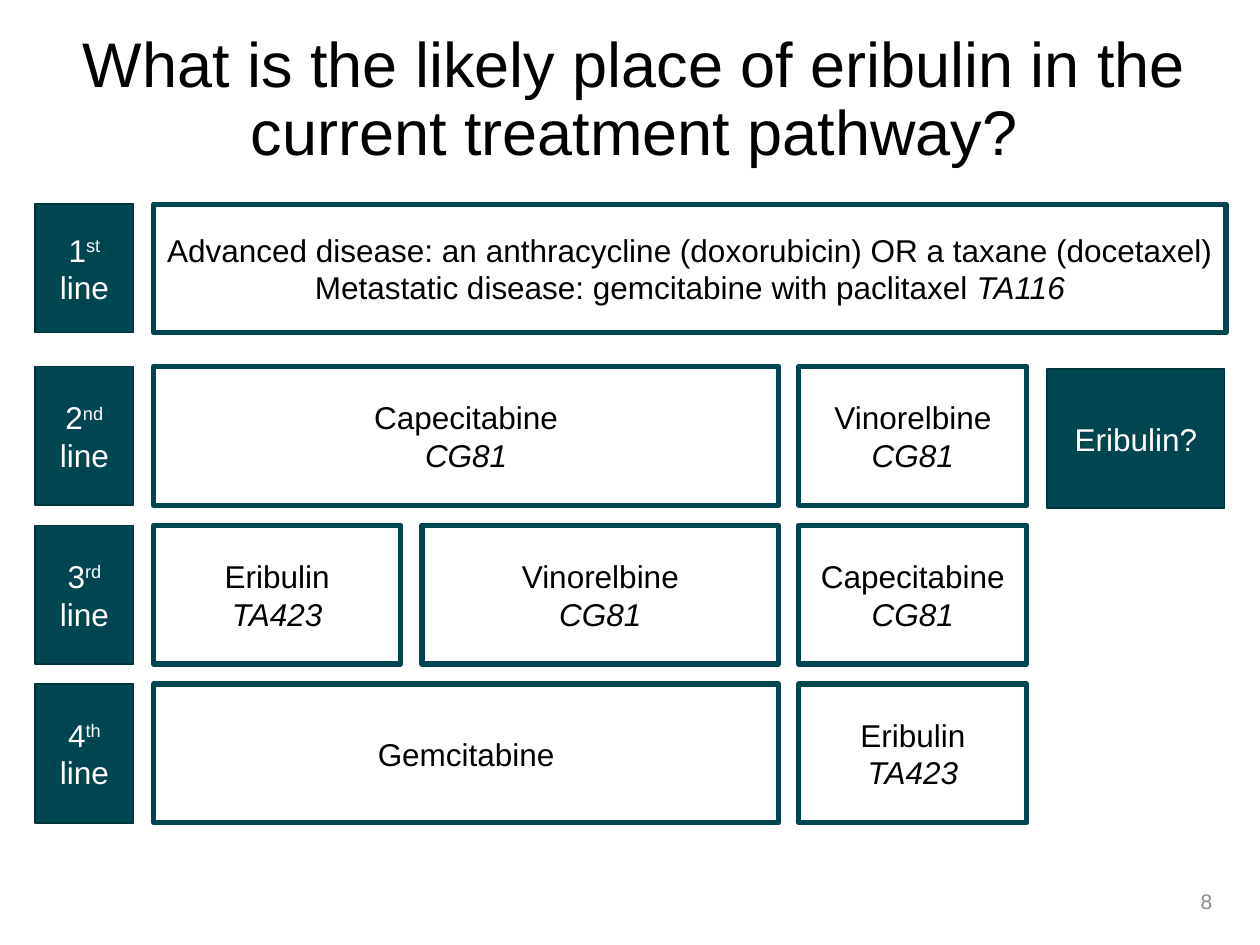
import pptx
import pptx.dml.color
import pptx.enum.shapes
import pptx.enum.text
import pptx.util
from pptx.util import Inches

RGBColor = pptx.dml.color.RGBColor
PP_ALIGN = pptx.enum.text.PP_ALIGN
MIDDLE = pptx.enum.text.MSO_ANCHOR.MIDDLE

TEAL = RGBColor(0x00, 0x46, 0x50)
DARK_TEAL = RGBColor(0x00, 0x34, 0x3B)
BLACK = RGBColor(0x00, 0x00, 0x00)
WHITE = RGBColor(0xFF, 0xFF, 0xFF)
GREY = RGBColor(0x8C, 0x8C, 0x8C)

FIRST_TOP, FIRST_HEIGHT = 1.62, 1.02
SECOND_TOP, ROW_PITCH, ROW_HEIGHT = 2.91, 1.26, 1.1
LABEL_LEFT, LABEL_WIDTH = 0.28, 0.78

# One entry per line of treatment: ordinal suffix, then its boxes as
# (left, width, paragraphs), each paragraph being (plain text, italic text).
PATHWAY = [
    ("st", [(1.22, 8.51, [
        ("Advanced disease: an anthracycline (doxorubicin) OR a taxane (docetaxel)", ""),
        ("Metastatic disease: gemcitabine with paclitaxel ", "TA116")])]),
    ("nd", [(1.22, 4.96, [("Capecitabine", ""), ("", "CG81")]),
            (6.34, 1.81, [("Vinorelbine", ""), ("", "CG81")])]),
    ("rd", [(1.22, 1.96, [("Eribulin", ""), ("", "TA423")]),
            (3.35, 2.83, [("Vinorelbine", ""), ("", "CG81")]),
            (6.34, 1.81, [("Capecitabine", ""), ("", "CG81")])]),
    ("th", [(1.22, 4.96, [("Gemcitabine", "")]),
            (6.34, 1.81, [("Eribulin", ""), ("", "TA423")])]),
]


def place(sp, left, top, width, height):
    sp.left, sp.top = Inches(left), Inches(top)
    sp.width, sp.height = Inches(width), Inches(height)


def prepare_text(tf):
    tf.word_wrap = True
    tf.auto_size = pptx.enum.text.MSO_AUTO_SIZE.NONE
    tf.vertical_anchor = MIDDLE


def add_run(p, text, color, size=18, italic=False, superscript=False):
    r = p.add_run()
    r.text = text
    r.font.name = "Arial"
    r.font.size = pptx.util.Pt(size)
    r.font.color.rgb = color
    if italic:
        r.font.italic = True
    if superscript:
        r.font._element.set("baseline", "30000")


def add_box(s, left, top, width, height, filled):
    """Add a solid or an outlined rectangle and return its text frame."""
    sp = s.shapes.add_shape(pptx.enum.shapes.MSO_SHAPE.RECTANGLE, Inches(left),
                            Inches(top), Inches(width), Inches(height))
    sp.shadow.inherit = False
    if filled:
        sp.fill.solid()
        sp.fill.fore_color.rgb = TEAL
    else:
        sp.fill.background()
    sp.line.color.rgb = DARK_TEAL if filled else TEAL
    sp.line.width = pptx.util.Pt(1 if filled else 3)
    prepare_text(sp.text_frame)
    return sp.text_frame


def add_line_label(s, number, suffix, top, height):
    p = add_box(s, LABEL_LEFT, top, LABEL_WIDTH, height, True).paragraphs[0]
    p.alignment = PP_ALIGN.CENTER
    add_run(p, str(number), WHITE)
    add_run(p, suffix, WHITE, superscript=True)
    add_run(p, " line", WHITE)


def add_treatment(s, left, top, width, height, paragraphs):
    tf = add_box(s, left, top, width, height, False)
    for i, (plain, italic) in enumerate(paragraphs):
        p = tf.add_paragraph() if i else tf.paragraphs[0]
        p.alignment = PP_ALIGN.CENTER
        if plain:
            add_run(p, plain, BLACK)
        if italic:
            add_run(p, italic, BLACK, italic=True)


def add_proposal(s, text):
    tf = add_box(s, 8.31, SECOND_TOP + 0.02, 1.41, ROW_HEIGHT, True)
    p = tf.paragraphs[0]
    p.alignment = PP_ALIGN.CENTER
    add_run(p, text, WHITE)


def set_title(s, text):
    title = s.shapes.title
    place(title, 0.31, 0.29, 9.45, 1.03)
    prepare_text(title.text_frame)
    p = title.text_frame.paragraphs[0]
    p.alignment = PP_ALIGN.CENTER
    p.line_spacing = 0.9
    add_run(p, text, BLACK, size=36)


def add_page_number(s, number):
    sp = s.shapes.add_textbox(Inches(7.47), Inches(6.95), Inches(2.25), Inches(0.4))
    prepare_text(sp.text_frame)
    p = sp.text_frame.paragraphs[0]
    p.alignment = PP_ALIGN.RIGHT
    add_run(p, str(number), GREY, size=12)


def main():
    prs = pptx.Presentation()
    prs.slide_width, prs.slide_height = Inches(10), Inches(7.5)
    s = prs.slides.add_slide(prs.slide_layouts[5])
    set_title(s, "What is the likely place of eribulin in the current treatment pathway?")
    for i, (suffix, treatments) in enumerate(PATHWAY):
        top = SECOND_TOP + (i - 1) * ROW_PITCH if i else FIRST_TOP
        height = ROW_HEIGHT if i else FIRST_HEIGHT
        add_line_label(s, i + 1, suffix, top, height)
        for left, width, paragraphs in treatments:
            add_treatment(s, left, top, width, height, paragraphs)
    add_proposal(s, "Eribulin?")
    add_page_number(s, 8)
    prs.save("out.pptx")


if __name__ == "__main__":
    main()
